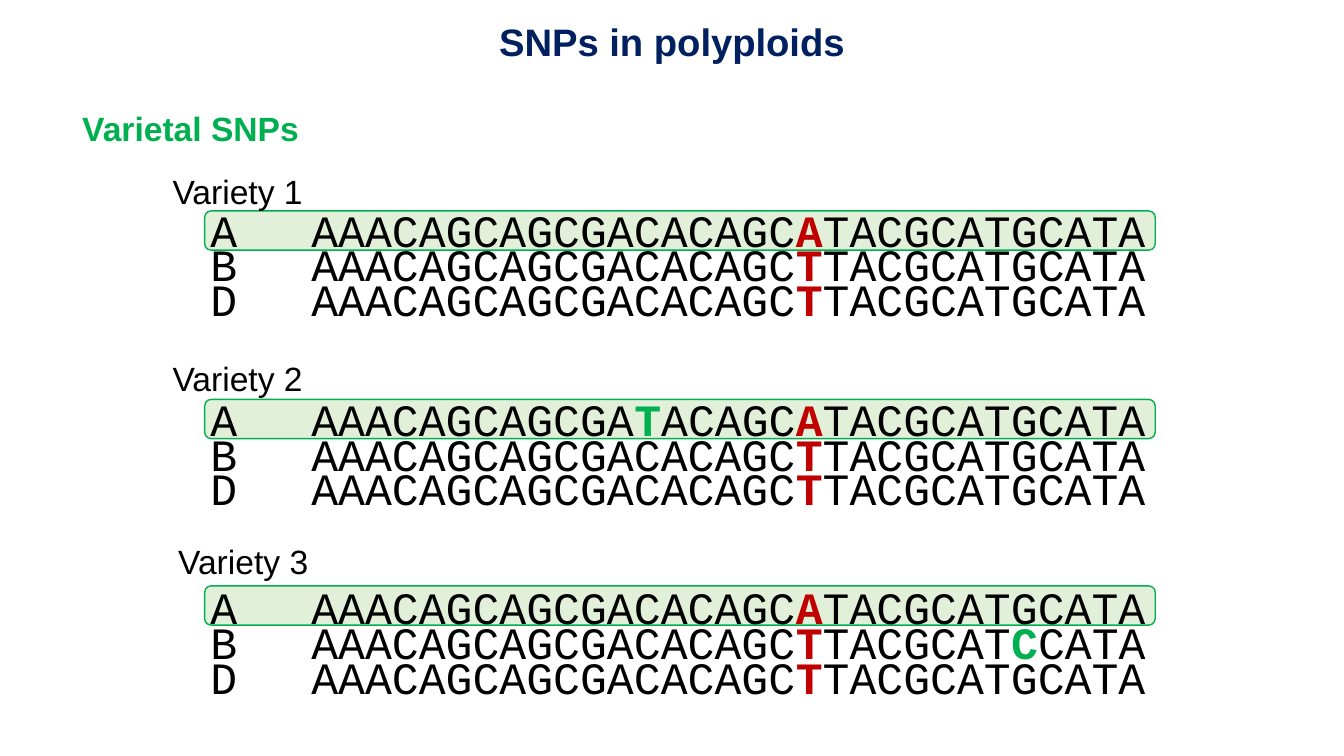
from lxml import etree
from pptx import Presentation
from pptx.dml.color import RGBColor
from pptx.enum.shapes import MSO_SHAPE
from pptx.enum.text import MSO_ANCHOR, MSO_AUTO_SIZE, PP_ALIGN
from pptx.oxml.ns import qn
from pptx.util import Pt

ROUND = MSO_SHAPE.ROUNDED_RECTANGLE
MIDDLE = MSO_ANCHOR.MIDDLE
NO_FIT = MSO_AUTO_SIZE.NONE
CENTER = PP_ALIGN.CENTER
LEFT = PP_ALIGN.LEFT

COLORS = {"navy": "002060", "green": "00B050", "red": "C00000",
          "black": "000000", "pale": "E2F0D9"}
BASE = "AAACAGCAGCGACACAGCTTACGCATGCATA"
SITE = 18
PITCH = 24.7
TAB = 72

GROUPS = [
    ("Variety 1", 33.6, 118.8, 145.4, 150.7, None),
    ("Variety 2", 33.6, 252, 280.8, 285.3, ("A", 12, "T")),
    ("Variety 3", 37.6, 382.5, 415.2, 418.5, ("B", 26, "C")),
]


def color(name):
    """Return the named colour."""
    return RGBColor.from_string(COLORS[name])


def add_run(para, text, size, font, hue="black", bold=False):
    """Add one formatted run."""
    run = para.add_run()
    run.text = text
    run.font.size = Pt(size)
    run.font.name = font
    run.font.bold = bold
    run.font.color.rgb = color(hue)


def add_title(slide, left, top, width, height):
    """Place and fill the title."""
    title = slide.shapes.title
    title.left, title.top = Pt(left), Pt(top)
    title.width, title.height = Pt(width), Pt(height)
    frame = title.text_frame
    frame.auto_size = NO_FIT
    frame.vertical_anchor = MIDDLE
    para = frame.paragraphs[0]
    para.alignment = CENTER
    para.line_spacing = 0.8
    add_run(para, "SNPs in polyploids", 27.3, "Arial", "navy", True)


def add_box(slide, left, top, width, height, align):
    """Add a wrapped text box and return its paragraph."""
    box = slide.shapes.add_textbox(Pt(left), Pt(top), Pt(width), Pt(height))
    box.text_frame.word_wrap = True
    para = box.text_frame.paragraphs[0]
    para.alignment = align
    return para


def add_label(slide, left, top, text, hue="black", bold=False):
    """Add a centred heading."""
    para = add_box(slide, left, top, 272.2, 36, CENTER)
    add_run(para, text, 24, "Arial", hue, bold)


def add_band(slide, left, top, width, height):
    """Add the green band behind a genome row."""
    band = slide.shapes.add_shape(ROUND, Pt(left), Pt(top), Pt(width), Pt(height))
    band.shadow.inherit = False
    band.fill.solid()
    band.fill.fore_color.rgb = color("pale")
    band.line.color.rgb = color("green")
    band.line.width = Pt(1)


def set_tab(para, pos):
    """Give the paragraph one left tab stop."""
    stops = etree.SubElement(para._p.get_or_add_pPr(), qn("a:tabLst"))
    etree.SubElement(stops, qn("a:tab"), pos=str(int(Pt(pos))), algn="l")


def add_row(slide, left, top, genome, marks):
    """Add one sequence with its marked bases."""
    para = add_box(slide, left, top, 712, 43.2, LEFT)
    para.line_spacing = 0.9
    para.space_before = Pt(6)
    set_tab(para, TAB)
    text, start = genome + "\t", 0
    for index, (base, hue) in sorted(marks.items()):
        add_run(para, text + BASE[start:index], 32, "Courier New")
        add_run(para, base, 32, "Courier New", hue, True)
        text, start = "", index + 1
    add_run(para, BASE[start:], 32, "Courier New")


def add_group(slide, name, left, top, row_top, band_top, snp):
    """Add one variety with its three genomes."""
    add_band(slide, 146.2, band_top, 679, 28)
    add_label(slide, left, top, name)
    for step, genome in enumerate("ABD"):
        marks = {SITE: ("A" if genome == "A" else "T", "red")}
        if snp and snp[0] == genome:
            marks[snp[1]] = (snp[2], "green")
        add_row(slide, 143.3, row_top + step * PITCH, genome, marks)


def main():
    """Build and save the slide."""
    deck = Presentation()
    deck.slide_width, deck.slide_height = Pt(960), Pt(540)
    slide = deck.slides.add_slide(deck.slide_layouts[5])
    add_title(slide, 169.6, 15.2, 620.6, 34.6)
    add_label(slide, 0, 73.4, "Varietal SNPs", "green", True)
    for group in GROUPS:
        add_group(slide, *group)
    deck.save("out.pptx")


if __name__ == "__main__":
    main()
